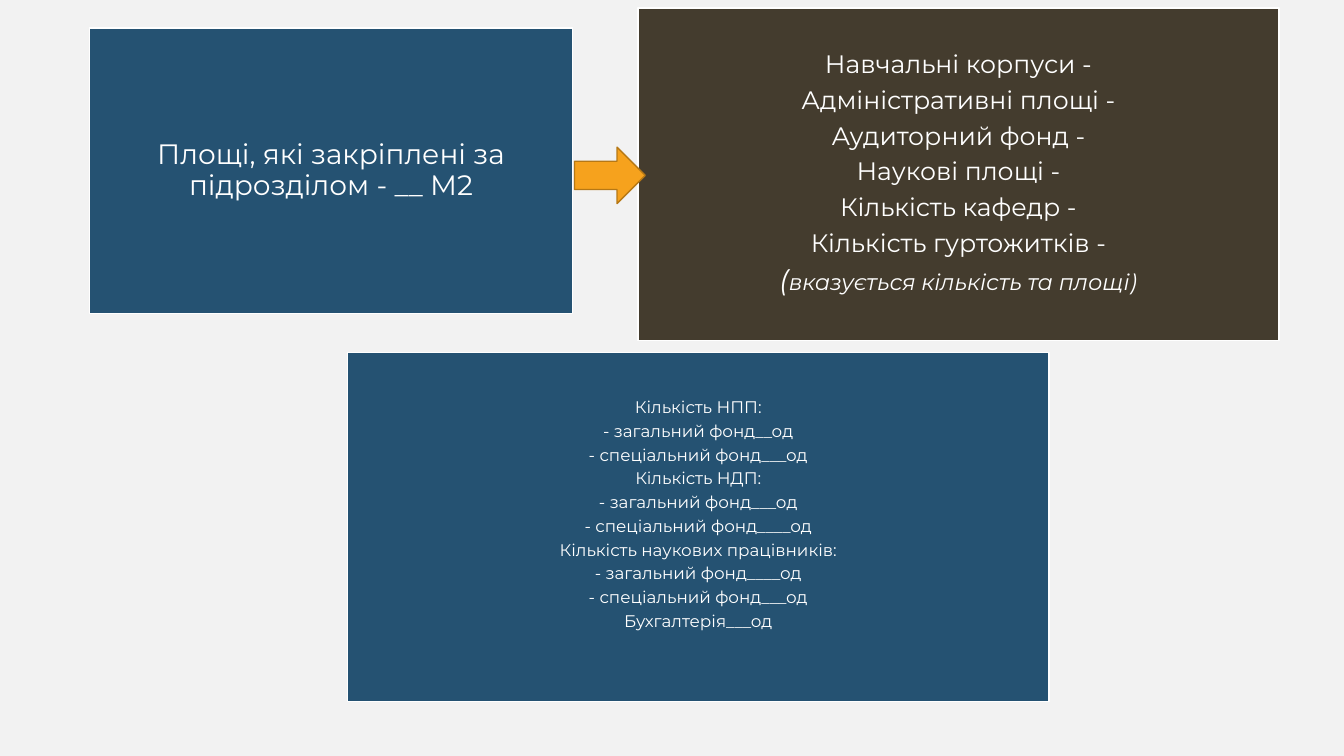
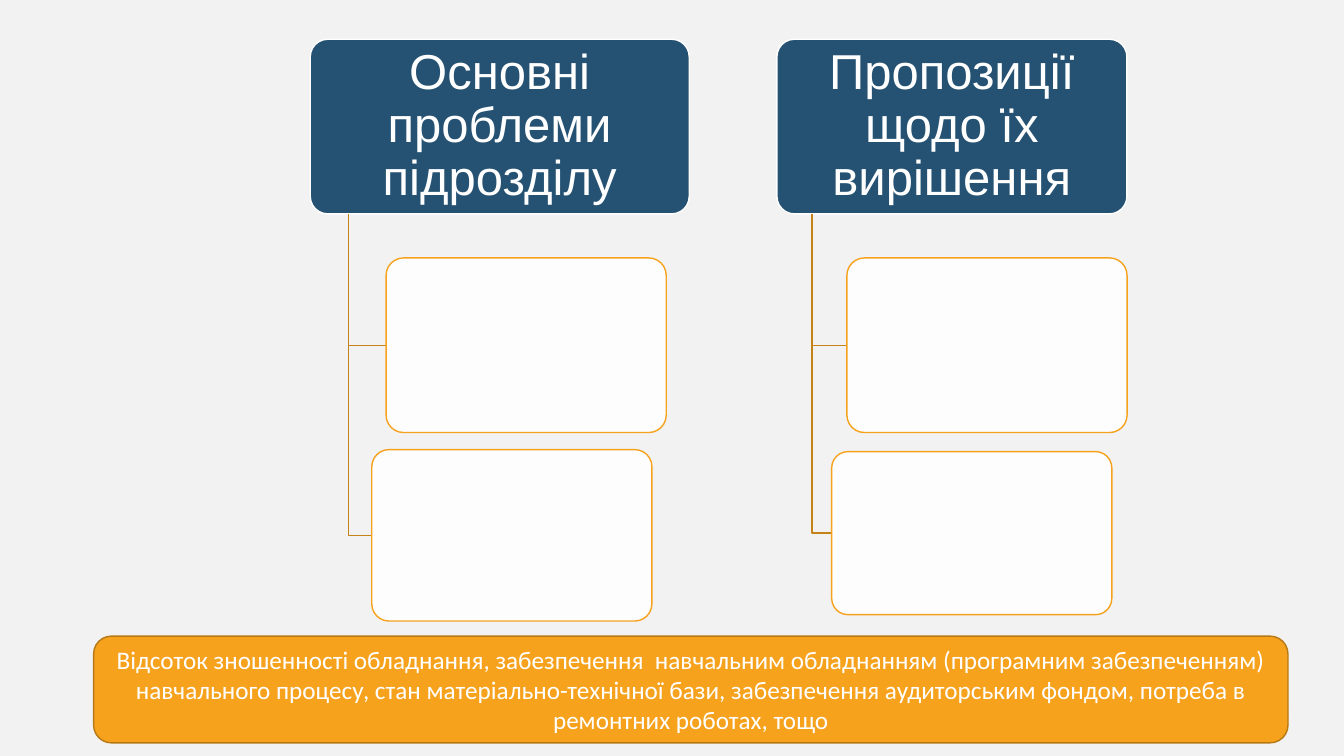
from dataclasses import dataclass

import pptx
import pptx.dml.color
import pptx.enum.shapes
import pptx.enum.text
import pptx.util
from lxml import etree
from pptx.oxml.ns import qn

Cm = pptx.util.Cm
Pt = pptx.util.Pt
KIND = pptx.enum.shapes.MSO_SHAPE


@dataclass(frozen=True)
class Theme:
    back: str = "F2F2F2"
    blue: str = "255272"
    brown: str = "443C2E"
    gold: str = "F6A21D"
    bronze: str = "B67815"
    amber: str = "C58217"
    white: str = "FFFFFF"
    main: str = "Montserrat"
    head: str = "Arial"
    foot: str = "Calibri"
    huge: int = 35
    large: int = 20
    mid: int = 18
    note: int = 16
    small: int = 12
    stroke: int = 1
    corner: float = 0.1
    tight: float = 0.9


THEME = Theme()

ROOMS = """Навчальні корпуси -
Адміністративні площі -
Аудиторний фонд -
Наукові площі -
Кількість кафедр -
Кількість гуртожитків -"""

STAFF = """Кількість НПП:
- загальний фонд__од
- спеціальний фонд___од
Кількість НДП:
- загальний фонд___од
- спеціальний фонд____од
Кількість наукових працівників:
- загальний фонд____од
- спеціальний фонд___од
Бухгалтерія___од"""

NEEDS = (
    "Відсоток зношенності обладнання, забезпечення  навчальним обладнанням "
    "(програмним забезпеченням) навчального процесу, стан матеріально-технічної "
    "бази, забезпечення аудиторським фондом, потреба в ремонтних роботах, тощо"
)

# Heading, its left and width, then left, top and height of the second leaf
TREES = [
    ("Основні проблеми підрозділу", 7.82, 9.55, (9.37, 11.33, 4.32)),
    ("Пропозиції щодо їх вирішення", 19.58, 8.82, (20.96, 11.38, 4.11)),
]
HEAD_TOP, HEAD_TALL = 0.99, 4.4
LEAF_TOP, LEAF_WIDE = 6.5, 7.06


def color(code):
    return pptx.dml.color.RGBColor.from_string(code)


def outline(shape, code):
    shape.shadow.inherit = False
    shape.line.color.rgb = color(code)
    shape.line.width = Pt(THEME.stroke)


def box(slide, kind, place, fill, line):
    """Draw a filled shape; place is left, top, width, height in cm."""
    shape = slide.shapes.add_shape(kind, *map(Cm, place))
    shape.fill.solid()
    shape.fill.fore_color.rgb = color(fill)
    outline(shape, line)
    return shape


def round_box(slide, place, fill, line):
    shape = box(slide, KIND.ROUNDED_RECTANGLE, place, fill, line)
    shape.adjustments[0] = THEME.corner
    return shape


def style(run, font, size, slant=None):
    run.font.name = font
    run.font.size = Pt(size)
    run.font.color.rgb = color(THEME.white)
    run.font.italic = slant


def space(para, size):
    para.alignment = pptx.enum.text.PP_ALIGN.CENTER
    para.line_spacing = THEME.tight
    para.space_after = Pt(round(size / 3))


def label(shape, text, font, size, side=0.2, edge=0.2):
    """Fill a shape with centred text; side and edge are insets in cm."""
    frame = shape.text_frame
    frame.word_wrap = True
    frame.vertical_anchor = pptx.enum.text.MSO_ANCHOR.MIDDLE
    frame.margin_left = frame.margin_right = Cm(side)
    frame.margin_top = frame.margin_bottom = Cm(edge)
    frame.text = text
    for para in frame.paragraphs:
        space(para, size)
        for run in para.runs:
            style(run, font, size)
    return frame


def add_note(frame, parts):
    """Add one italic paragraph made of (text, size) parts."""
    para = frame.add_paragraph()
    space(para, THEME.mid)
    for text, size in parts:
        run = para.add_run()
        run.text = text
        style(run, THEME.main, size, True)


def elbow(slide, start, end):
    """Draw a line down from start, then across to end."""
    (left, top), (right, low) = start, end
    path = slide.shapes.build_freeform(Cm(left), Cm(top))
    path.add_line_segments([(Cm(left), Cm(low)), (Cm(right), Cm(low))], close=False)
    shape = path.convert_to_shape()
    shape.fill.background()
    outline(shape, THEME.amber)


def leaf(slide, place):
    shape = round_box(slide, place, THEME.white, THEME.gold)
    tint = shape.fill._xPr.find(qn("a:solidFill"))[0]
    etree.SubElement(tint, qn("a:alpha")).set("val", "90000")


def tree(slide, text, left, wide, last):
    """Draw a heading with two empty leaves hung from it."""
    head = round_box(slide, (left, HEAD_TOP, wide, HEAD_TALL), THEME.blue, THEME.white)
    label(head, text, THEME.head, THEME.huge, 0.18, 0.13)
    trunk = left + wide * 0.1
    first = (left + wide * 0.2, LEAF_TOP, HEAD_TALL)
    for side, top, tall in (first, last):
        elbow(slide, (trunk, HEAD_TOP + HEAD_TALL), (side, top + tall / 2))
        leaf(slide, (side, top, LEAF_WIDE, tall))


def area_slide(slide):
    area = box(slide, KIND.RECTANGLE, (2.26, 0.71, 12.17, 7.19), THEME.blue, THEME.white)
    label(area, "Площі, які закріплені за підрозділом - __ М2", THEME.main, THEME.large)

    staff = box(slide, KIND.RECTANGLE, (8.76, 8.89, 17.68, 8.79), THEME.blue, THEME.white)
    frame = label(staff, STAFF, THEME.main, THEME.small, 0.13, 0.13)
    frame.margin_bottom = Cm(0.74)

    rooms = box(slide, KIND.RECTANGLE, (16.08, 0.2, 16.15, 8.38), THEME.brown, THEME.white)
    frame = label(rooms, ROOMS, THEME.main, THEME.mid)
    add_note(frame, [("(", THEME.large), ("вказується кількість та площі)", THEME.note)])

    box(slide, KIND.RIGHT_ARROW, (14.48, 3.71, 1.78, 1.42), THEME.gold, THEME.bronze)


def issue_slide(slide):
    for item in TREES:
        tree(slide, *item)
    foot = box(slide, KIND.ROUNDED_RECTANGLE, (2.36, 16.03, 30.1, 2.69),
               THEME.gold, THEME.bronze)
    frame = label(foot, NEEDS, THEME.foot, THEME.mid, 0.25, 0.13)
    frame.paragraphs[0].line_spacing = 1.0


def main():
    deck = pptx.Presentation()
    deck.slide_width, deck.slide_height = Cm(33.87), Cm(19.05)
    fill = deck.slide_master.background.fill
    fill.solid()
    fill.fore_color.rgb = color(THEME.back)
    for draw in (area_slide, issue_slide):
        draw(deck.slides.add_slide(deck.slide_layouts[6]))
    deck.save("out.pptx")


if __name__ == "__main__":
    main()
